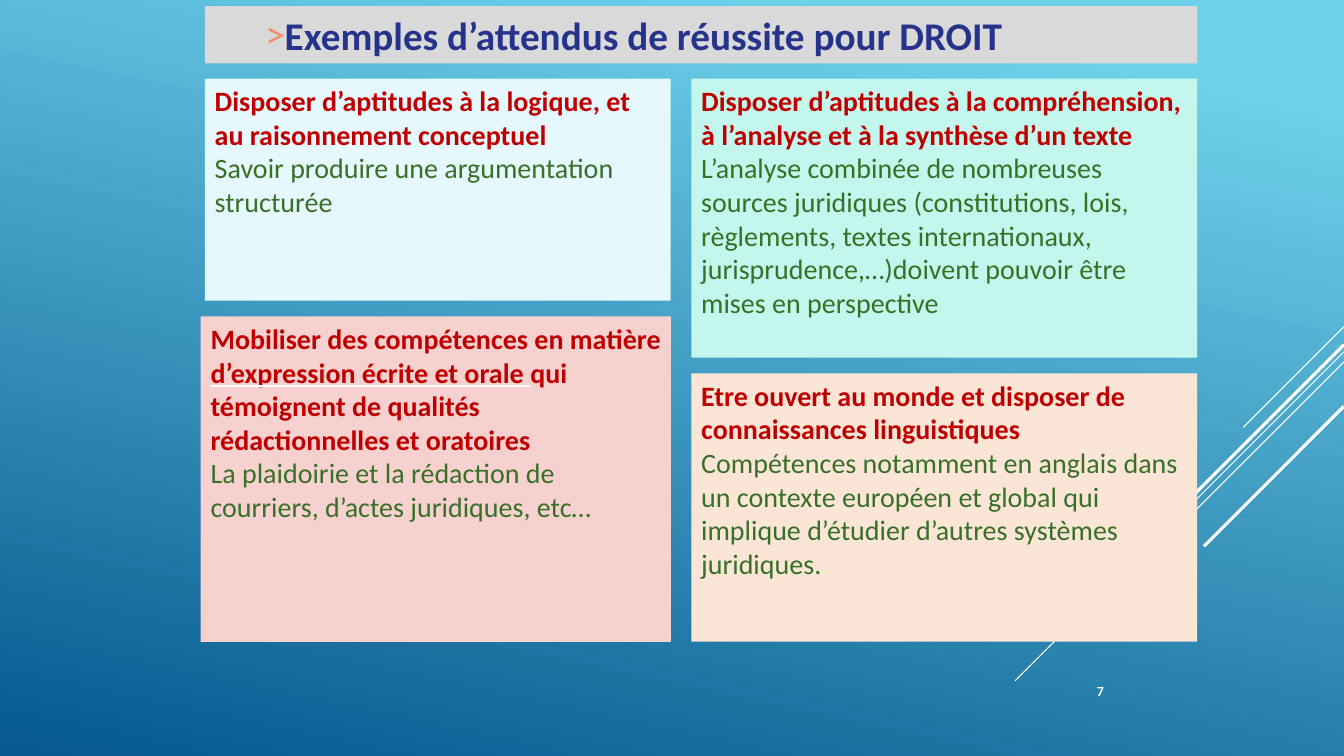
from lxml import etree
from pptx import Presentation
from pptx import util as u
from pptx.dml.color import RGBColor
from pptx.enum import shapes, text
from pptx.oxml.ns import qn

RED, GREEN, WHITE = "C00000", "387026", "FFFFFF"


def tint(code):
    return RGBColor.from_string(code)


def node(tag, **attrs):
    item = etree.Element(qn(tag))
    for key, value in attrs.items():
        item.set(key, value)
    return item


def paint(tag, code):
    item = node(tag)
    solid = etree.SubElement(item, qn("a:solidFill")) if tag == "a:uFill" else item
    etree.SubElement(solid, qn("a:srgbClr")).set("val", code)
    return item


class Deck:
    font = "Calibri"

    def __init__(self, page):
        self.page = page

    def back(self, top, base, angle):
        fill = self.page.background.fill
        fill.gradient()
        fill.gradient_angle = angle
        for stop, (pos, code) in zip(fill.gradient_stops, [(0.1, top), (1, base)]):
            stop.position = pos
            stop.color.rgb = tint(code)

    def line(self, x1, y1, x2, y2, width):
        link = self.page.shapes.add_connector(
            shapes.MSO_CONNECTOR.STRAIGHT, *map(u.Pt, (x1, y1, x2, y2)))
        link.line.color.rgb = tint(WHITE)
        link.line.width = u.Pt(width)
        link._element.spPr.append(node("a:effectLst"))

    def run(self, par, words, size, code, bold=False, under=False):
        run = par.add_run()
        run.text = words
        font = run.font
        font.name, font.size, font.bold = self.font, u.Pt(size), bold
        font.color.rgb = tint(code)
        if under:
            font.underline = True
            latin = run._r.rPr.find(qn("a:latin"))
            latin.addprevious(paint("a:uFill", WHITE))

    def frame(self, shape, anchor=text.MSO_ANCHOR.TOP):
        frame = shape.text_frame
        frame.word_wrap = True
        frame.auto_size = text.MSO_AUTO_SIZE.NONE
        frame.vertical_anchor = anchor
        frame.margin_left = frame.margin_right = u.Pt(7.2)
        frame.margin_top = frame.margin_bottom = u.Pt(3.6)
        return frame

    def title(self, words, box, fill):
        head = self.page.shapes.title
        head.left, head.top, head.width, head.height = map(u.Pt, box)
        head.fill.solid()
        head.fill.fore_color.rgb = tint(fill)
        par = self.frame(head).paragraphs[0]
        par.alignment = text.PP_ALIGN.LEFT
        props = par._p.get_or_add_pPr()
        props.set("marL", str(u.Pt(49)))
        props.set("indent", str(-u.Pt(13)))
        props.append(paint("a:buClr", "F28E65"))
        props.append(node("a:buFont", typeface=self.font))
        props.append(node("a:buChar", char=">"))
        self.run(par, words, 28, "26338B", bold=True)

    def card(self, box, fill, heads, body):
        card = self.page.shapes.add_shape(
            shapes.MSO_SHAPE.RECTANGLE, *map(u.Pt, box))
        card.shadow.inherit = False
        card.fill.solid()
        card.fill.fore_color.rgb = tint(fill)
        card.line.fill.background()
        frame = self.frame(card)
        first, last = frame.paragraphs[0], frame.add_paragraph()
        first.alignment = last.alignment = text.PP_ALIGN.LEFT
        for words, under in heads:
            self.run(first, words, 20, RED, bold=True, under=under)
        self.run(last, body, 20, GREEN)

    def label(self, words, box):
        note = self.page.shapes.add_textbox(*map(u.Pt, box))
        par = self.frame(note, text.MSO_ANCHOR.MIDDLE).paragraphs[0]
        par.alignment = text.PP_ALIGN.RIGHT
        self.run(par, words, 10, WHITE, bold=True)


LINES = [(233.3, 72, 0.75), (251.3, 235, 0.75), (258.5, 149.5, 0.75),
         (246.2, 137.5, 2.25), (290.2, 100, 2.25)]

CARDS = [
    ((143.3, 226.1, 336, 232.5), "F7D0D0",
     [("Mobiliser des compétences en matière ", False),
      ("d’expression écrite et orale ", True),
      ("qui témoignent de qualités rédactionnelles et oratoires", False)],
     "La plaidoirie et la rédaction de courriers, d’actes juridiques, etc…"),
    ((146.3, 56.2, 332.8, 158.6), "E4F8FD",
     [("Disposer d’aptitudes à la logique, et au raisonnement conceptuel", False)],
     "Savoir produire une argumentation structurée"),
    ((493.8, 56.2, 361.3, 199.2), "C3F7ED",
     [("Disposer d’aptitudes à la compréhension, à l’analyse et à la synthèse "
       "d’un texte", False)],
     "L’analyse combinée de nombreuses sources juridiques (constitutions, lois, "
     "règlements, textes internationaux, jurisprudence,…)doivent pouvoir être "
     "mises en perspective"),
    ((493.8, 266.7, 361.3, 191.7), "FAE5D7",
     [("Etre ouvert au monde et disposer de connaissances linguistiques", False)],
     "Compétences notamment en anglais dans un contexte européen et global qui "
     "implique d’étudier d’autres systèmes juridiques."),
]


def main():
    show = Presentation()
    show.slide_width, show.slide_height = u.Pt(960), u.Pt(540)
    deck = Deck(show.slides.add_slide(show.slide_layouts[5]))
    deck.back("6ED2EB", "06588E", 258)
    for top, span, width in LINES:
        deck.line(960, top, 960 - span, top + span, width)
    deck.label("7", (760.3, 478.8, 35.3, 28.8))
    for card in CARDS:
        deck.card(*card)
    deck.title("Exemples d’attendus de réussite pour DROIT",
               (146.3, 4.3, 708.8, 41), "D9D9D9")
    show.save("out.pptx")


if __name__ == "__main__":
    main()
